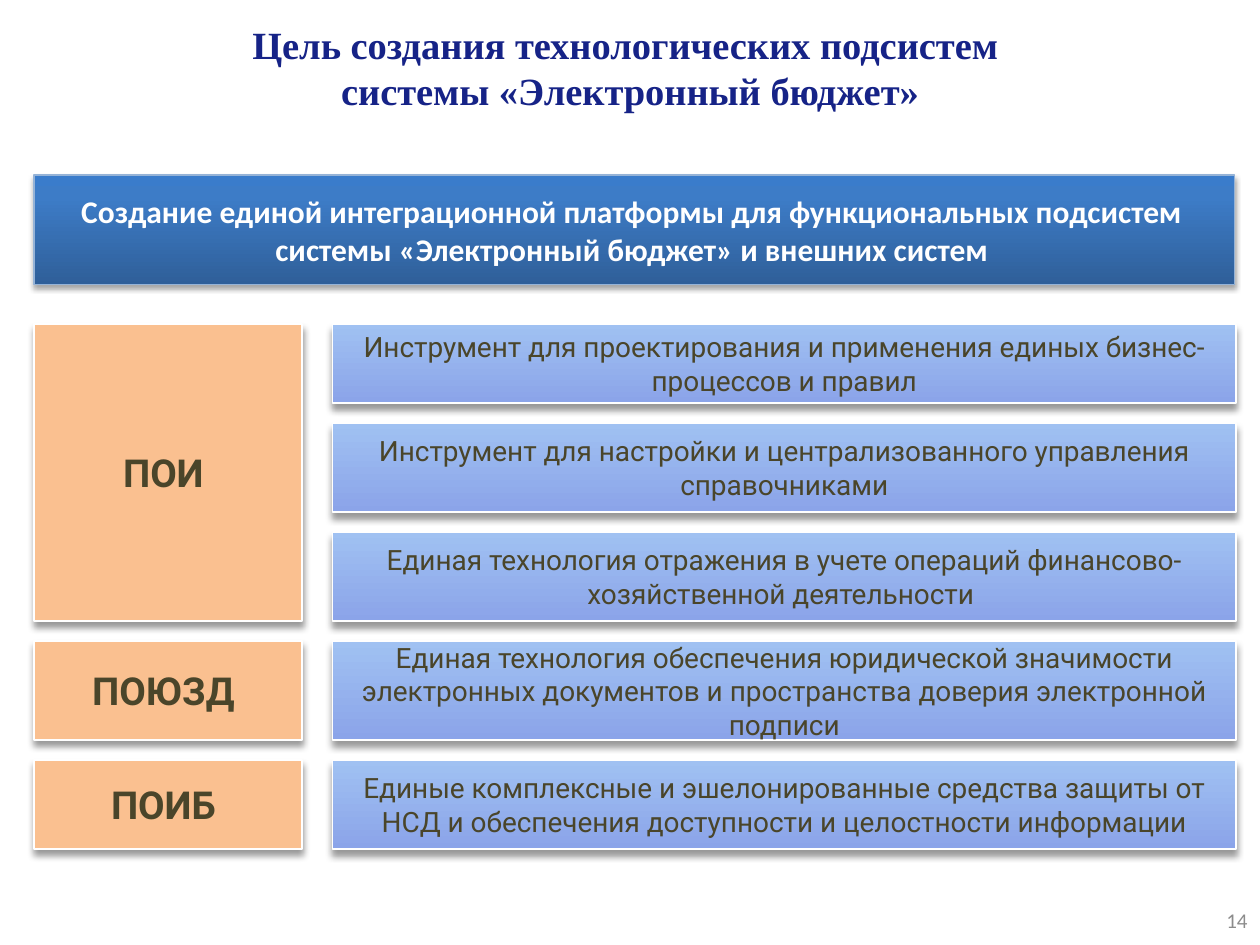
from dataclasses import dataclass

from lxml.etree import SubElement
from pptx import Presentation
from pptx.dml.color import RGBColor
from pptx.enum.shapes import MSO_SHAPE
from pptx.enum.text import MSO_ANCHOR, MSO_AUTO_SIZE, PP_ALIGN
from pptx.oxml.ns import qn
from pptx.util import Inches, Pt


@dataclass(frozen=True)
class Style:
    font: dict
    color: str
    stops: tuple = ()
    outline: tuple = ()
    shadow: tuple = ()
    margins: tuple = (0.1, 0.05, 0.1, 0.05)
    align: PP_ALIGN = PP_ALIGN.CENTER


CARD = {"outline": ("FFFFFF", 1), "shadow": (40, 4, 3),
        "margins": (0.14, 0.07, 0.14, 0.07)}


@dataclass(frozen=True)
class Theme:
    title: Style = Style({"name": "Times New Roman", "size": Pt(22), "bold": True}, "162387")
    number: Style = Style({"name": "Calibri", "size": Pt(12)}, "8C8C8C", align=PP_ALIGN.RIGHT)
    banner: Style = Style({"name": "Calibri", "size": Pt(18), "bold": True}, "FFFFFF",
                          ((0, "3A7CCB"), (20, "3D7CC7"), (100, "2F5F99")),
                          ("95B3D7", 0.75), (35, 3.1, 1.8), (0.04, 0.05, 0.08, 0.05))
    label: Style = Style({"name": "Roboto", "size": Pt(22), "bold": True}, "4A452A",
                         ((0, "FAC090"), (100, "FAC090")), **CARD)
    goal: Style = Style({"name": "Roboto", "size": Pt(16)}, "4A452A",
                        ((0, "A0C1F2"), (100, "8BA4E9")), **CARD)


THEME = Theme()

SUBSYSTEMS = [
    ("ПОИ ", [
        (0.63, "Инструмент для проектирования и применения единых бизнес-процессов и правил"),
        (0.71, "Инструмент для настройки и централизованного управления справочниками"),
        (0.71, "Единая технология отражения в учете операций финансово-хозяйственной деятельности "),
    ]),
    ("ПОЮЗД ", [
        (0.79, "Единая технология обеспечения юридической значимости электронных документов "
               "и пространства доверия электронной подписи"),
    ]),
    ("ПОИБ ", [
        (0.71, "Единые комплексные и эшелонированные средства защиты от НСД "
               "и обеспечения доступности и целостности информации"),
    ]),
]


def write(frame, text, style):
    frame.text = text
    left, top, right, bottom = map(Inches, style.margins)
    layout = {"word_wrap": True, "auto_size": MSO_AUTO_SIZE.NONE,
              "vertical_anchor": MSO_ANCHOR.MIDDLE, "margin_left": left,
              "margin_top": top, "margin_right": right, "margin_bottom": bottom}
    for key, value in layout.items():
        setattr(frame, key, value)
    for paragraph in frame.paragraphs:
        paragraph.alignment = style.align
        for run in paragraph.runs:
            for key, value in style.font.items():
                setattr(run.font, key, value)
            run.font.color.rgb = RGBColor.from_string(style.color)


def add_gradient(panel, stops):
    panel.fill.gradient()
    panel.fill.gradient_angle = 270
    stop_list = panel._element.spPr.find(qn("a:gradFill")).find(qn("a:gsLst"))
    for default_stop in list(stop_list):
        stop_list.remove(default_stop)
    for percent, color in stops:
        stop = SubElement(stop_list, qn("a:gs"), pos=str(percent * 1000))
        SubElement(stop, qn("a:srgbClr"), val=color)


def add_shadow(panel, opacity, blur, distance):
    panel.shadow.inherit = False
    effects = panel._element.spPr.find(qn("a:effectLst"))
    shadow = SubElement(effects, qn("a:outerShdw"), blurRad=str(Pt(blur)),
                        dist=str(Pt(distance)), dir="5400000", rotWithShape="0")
    black = SubElement(shadow, qn("a:srgbClr"), val="000000")
    SubElement(black, qn("a:alpha"), val=str(opacity * 1000))


def add_panel(slide, box, text, style):
    panel = slide.shapes.add_shape(MSO_SHAPE.RECTANGLE, *map(Inches, box))
    add_gradient(panel, style.stops)
    color, width = style.outline
    panel.line.color.rgb = RGBColor.from_string(color)
    panel.line.width = Pt(width)
    add_shadow(panel, *style.shadow)
    write(panel.text_frame, text, style)


def add_title(slide, box, text):
    title = slide.shapes.title
    for key, value in zip(("left", "top", "width", "height"), box):
        setattr(title, key, Inches(value))
    write(title.text_frame, text, THEME.title)


def add_page_number(slide, box, text):
    number = slide.shapes.add_textbox(*map(Inches, box))
    write(number.text_frame, text, THEME.number)


def add_subsystems(slide, box, subsystems):
    left, top, width, height = box
    label_width, goal_width = 2.13, 7.17
    goal_left = left + width - goal_width
    heights = [goal_height for _, goals in subsystems for goal_height, _ in goals]
    gap = (height - sum(heights)) / (len(heights) - 1)
    for label, goals in subsystems:
        group_top = top
        for goal_height, goal in goals:
            add_panel(slide, (goal_left, top, goal_width, goal_height), goal, THEME.goal)
            top += goal_height + gap
        group_height = top - gap - group_top
        add_panel(slide, (left, group_top, label_width, group_height), label, THEME.label)


def main():
    presentation = Presentation()
    presentation.slide_width = Inches(10)
    presentation.slide_height = Inches(7.5)
    slide = presentation.slides.add_slide(presentation.slide_layouts[5])
    add_title(slide, (0, 0, 10, 1.07),
              "Цель создания технологических подсистем \nсистемы «Электронный бюджет»")
    add_page_number(slide, (9.36, 7.1, 0.64, 0.4), "14")
    add_panel(slide, (0.27, 1.39, 9.53, 0.87),
              "Создание единой интеграционной платформы для функциональных подсистем "
              "системы «Электронный бюджет» и внешних систем", THEME.banner)
    add_subsystems(slide, (0.27, 2.57, 9.54, 4.17), SUBSYSTEMS)
    presentation.save("out.pptx")


if __name__ == "__main__":
    main()
